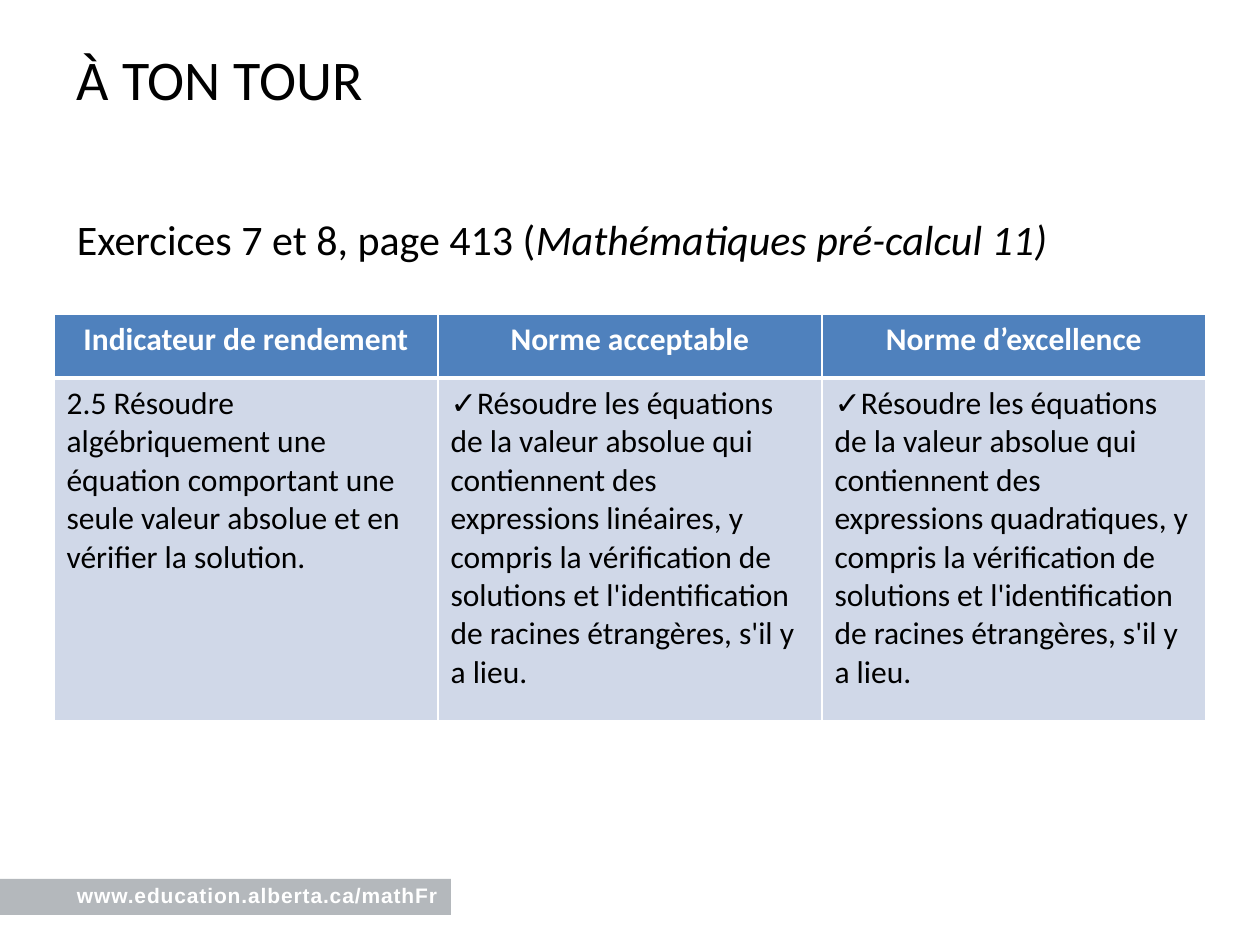
from lxml import etree
from pptx import Presentation
from pptx.dml.color import RGBColor
from pptx.enum.shapes import MSO_SHAPE
from pptx.enum.text import PP_ALIGN
from pptx.oxml.ns import qn
from pptx.util import Pt

RECTANGLE = MSO_SHAPE.RECTANGLE
LEFT, CENTER = PP_ALIGN.LEFT, PP_ALIGN.CENTER
EMU_PER_PX = 914400 / 126
COLORS = {"text": "000000", "white": "FFFFFF", "band": "6A737B",
          "header": "4F81BD", "body": "D0D8E8"}

TITLE = "À TON TOUR"
EXERCISES = "Exercices 7 et 8, page 413 ("
BOOK = "Mathématiques pré-calcul 11)"
ADDRESS = "www.education.alberta.ca/mathFr"
TABLE_ROWS = [
    ["Indicateur de rendement", "Norme acceptable", "Norme d’excellence"],
    ["2.5 Résoudre algébriquement une équation comportant une seule valeur "
     "absolue et en vérifier la solution.",
     "✓Résoudre les équations de la valeur absolue qui contiennent des "
     "expressions linéaires, y compris la vérification de solutions et "
     "l'identification de racines étrangères, s'il y a lieu.",
     "✓Résoudre les équations de la valeur absolue qui contiennent des "
     "expressions quadratiques, y compris la vérification de solutions et "
     "l'identification de racines étrangères, s'il y a lieu."],
]
TABLE_LEFT, TABLE_TOP, COLUMN_WIDTH = 54, 314, 384
ROW_HEIGHTS = [64, 343]
THIN, THICK = 1, 3


def px(*lengths):
    return [round(length * EMU_PER_PX) for length in lengths]


def rgb(name):
    return RGBColor.from_string(COLORS[name])


def add_text(paragraph, text, size=18, font="Calibri", color="text",
             bold=False, italic=False, align=LEFT, spacing=None):
    """Append a run; spacing is in hundredths of a point."""
    paragraph.alignment = align
    run = paragraph.add_run()
    run.text = text
    run.font.size = Pt(size)
    run.font.name = font
    run.font.bold = bold
    run.font.italic = italic
    run.font.color.rgb = rgb(color)
    if spacing is not None:
        run.font._element.set("spc", str(spacing))


def add_box(slide, *bounds):
    """Add a text box without insets and return its first paragraph."""
    frame = slide.shapes.add_textbox(*px(*bounds)).text_frame
    frame.word_wrap = True
    frame.margin_left = frame.margin_top = 0
    frame.margin_right = frame.margin_bottom = 0
    return frame.paragraphs[0]


def set_borders(cell, top, bottom):
    properties = cell._tc.get_or_add_tcPr()
    widths = {"a:lnL": THIN, "a:lnR": THIN, "a:lnT": top, "a:lnB": bottom}
    for position, (tag, width) in enumerate(widths.items()):
        line = etree.Element(qn(tag), w=str(Pt(width)))
        fill = etree.SubElement(line, qn("a:solidFill"))
        etree.SubElement(fill, qn("a:srgbClr"), val=COLORS["white"])
        properties.insert(position, line)


def add_band(slide):
    band = slide.shapes.add_shape(RECTANGLE, *px(0, 879, 451, 36))
    band.shadow.inherit = False
    band.fill.solid()
    band.fill.fore_color.rgb = rgb("band")
    band.line.fill.background()
    color = band._element.spPr.find(".//" + qn("a:srgbClr"))
    etree.SubElement(color, qn("a:alpha"), val="50000")


def add_standards_table(slide):
    column_count = len(TABLE_ROWS[0])
    table = slide.shapes.add_table(
        len(TABLE_ROWS), column_count,
        *px(TABLE_LEFT, TABLE_TOP, COLUMN_WIDTH * column_count,
            sum(ROW_HEIGHTS))).table
    for column in table.columns:
        column.width = px(COLUMN_WIDTH)[0]
    for row_index, texts in enumerate(TABLE_ROWS):
        table.rows[row_index].height = px(ROW_HEIGHTS[row_index])[0]
        header = row_index == 0
        for column_index, text in enumerate(texts):
            cell = table.cell(row_index, column_index)
            cell.fill.solid()
            cell.fill.fore_color.rgb = rgb("header" if header else "body")
            set_borders(cell, top=THIN if header else THICK,
                        bottom=THICK if header else THIN)
            add_text(cell.text_frame.paragraphs[0], text, bold=header,
                     color="white" if header else "text",
                     align=CENTER if header else LEFT)


def main():
    presentation = Presentation()
    presentation.slide_width, presentation.slide_height = px(1260, 945)
    slide = presentation.slides.add_slide(presentation.slide_layouts[6])

    add_band(slide)
    add_text(add_box(slide, 77, 883, 374, 26), ADDRESS, size=12,
             font="Arial", color="white", bold=True, spacing=50)
    add_text(add_box(slide, 77, 45, 814, 68), TITLE, size=32)
    exercises = add_box(slide, 77, 214, 1109, 52)
    add_text(exercises, EXERCISES, size=24)
    add_text(exercises, BOOK, size=24, italic=True)
    add_standards_table(slide)

    presentation.save("out.pptx")


if __name__ == "__main__":
    main()
